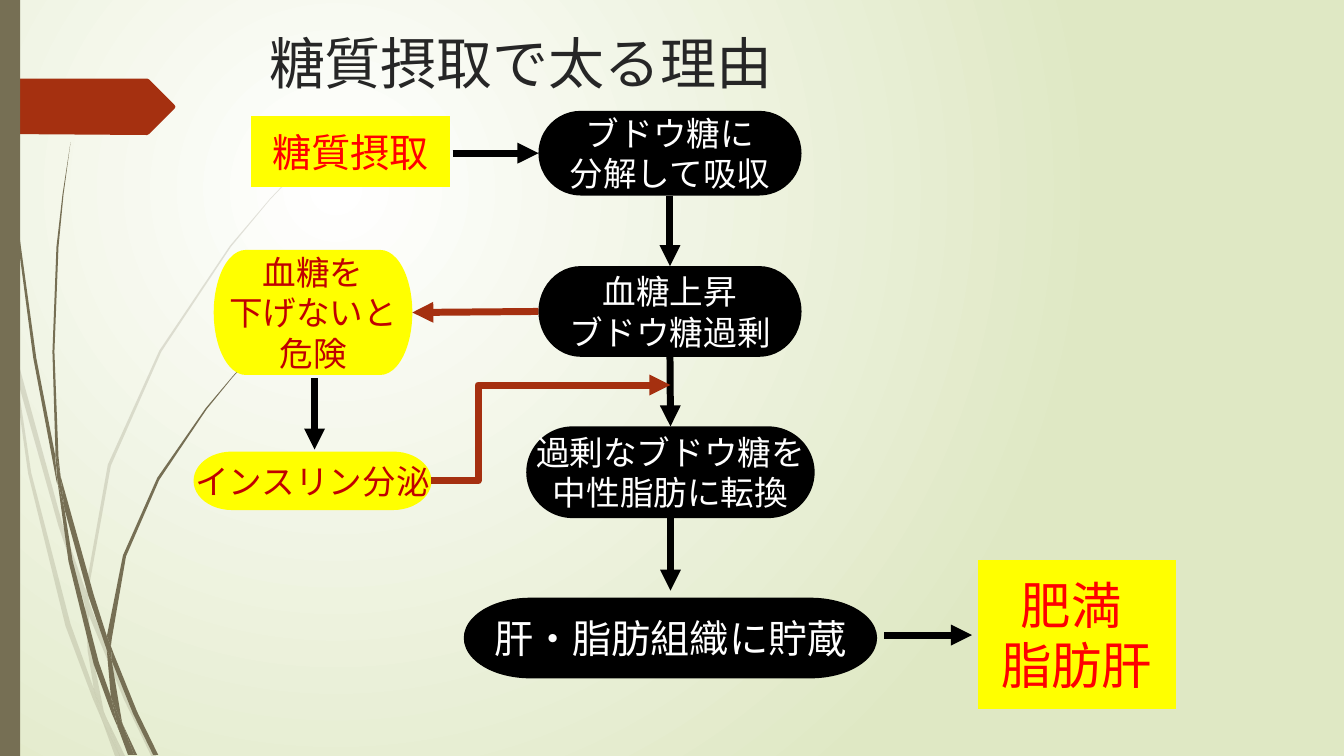
from lxml.etree import SubElement
from pptx import Presentation
from pptx.dml.color import RGBColor
from pptx.enum.shapes import MSO_CONNECTOR as LINK, MSO_SHAPE as SHAPE
from pptx.enum.text import MSO_ANCHOR, PP_ALIGN
from pptx.oxml import parse_xml
from pptx.oxml.ns import nsdecls, qn
from pptx.util import Inches, Pt

BLACK = RGBColor(0x00, 0x00, 0x00)
WHITE = RGBColor(0xFF, 0xFF, 0xFF)
YELLOW = RGBColor(0xFF, 0xFF, 0x00)
RED = RGBColor(0xFF, 0x00, 0x00)
DARK_RED = RGBColor(0xC0, 0x00, 0x00)
RUST = RGBColor(0xA5, 0x30, 0x10)
OLIVE = RGBColor(0x76, 0x6F, 0x54)
CHARCOAL = RGBColor(0x26, 0x26, 0x26)

# Outlines of the grass blades, in inches
PALE_BLADES = [
    [(.11, 3.5), (.09, 3.22), (0, 2.82), (0, 2.99), (.1, 3.44)],
    [(.58, 5.22), (.84, 5.99), (.85, 5.86), (.62, 5.2), (.14, 3.45), (.17, 3.76)],
    [(.92, 6.07), (.88, 5.96), (.88, 6.1), (1.23, 6.94), (1.5, 7.5), (1.55, 7.5), (1.27, 6.92)],
    [(1.19, 7.5), (1.24, 7.5), (1.05, 7.11)],
    [(.93, 6.83), (.7, 6.19), (.31, 4.69), (.17, 3.76), (.11, 3.5), (.28, 4.7), (.65, 6.21),
     (.92, 6.93), (1.01, 7.14), (.99, 7.07)],
    [(.84, 5.99), (.87, 6.46), (.93, 6.83), (.96, 6.92), (1.05, 7.11), (1.03, 7.06),
     (.91, 6.46), (.88, 6.1), (.88, 6.08)],
    [(.88, 5.84), (1.1, 4.62), (1.6, 3.49), (2.29, 2.45), (2.68, 1.98), (2.9, 1.75), (3.12, 1.54),
     (3.12, 1.53), (2.89, 1.75), (2.68, 1.97), (2.28, 2.44), (1.58, 3.48), (1.07, 4.61),
     (.85, 5.84), (.85, 5.86), (.88, 5.96)],
    [(1.01, 7.14), (1.14, 7.5), (1.19, 7.5)],
    [(.88, 6.08), (.88, 6.1), (.88, 5.96), (.85, 5.86), (.84, 5.99)],
    [(.96, 6.92), (.93, 6.83), (.99, 7.07), (1.01, 7.14), (1.19, 7.5), (1.05, 7.11)],
]
DARK_BLADES = [
    [(.07, 1.1), (.17, 2.33), (.33, 3.55), (.56, 4.77), (.57, 4.81), (.55, 4.57), (.55, 4.53),
     (.36, 3.55), (.19, 2.32), (.08, 1.09), (.05, .48), (.04, 0), (.03, 0), (.04, .48)],
    [(.88, 5.92), (1.06, 6.45), (1.06, 6.31), (.93, 5.9), (.6, 4.72), (.64, 5.05)],
    [(1.13, 6.49), (1.1, 6.41), (1.11, 6.56), (1.32, 7.08), (1.52, 7.49), (1.57, 7.49),
     (1.36, 7.06)],
    [(1.1, 6.91), (.98, 6.57), (.72, 5.56), (.64, 5.05), (.57, 4.77), (.68, 5.57), (.93, 6.59),
     (1.11, 7.08), (1.17, 7.22), (1.16, 7.17)],
    [(.6, 4.72), (.58, 4.53), (.54, 3.49), (.58, 2.45), (.63, 1.93), (.7, 1.41), (.62, 1.93),
     (.56, 2.45), (.52, 3.49), (.55, 4.49)],
    [(1.33, 7.49), (1.36, 7.49), (1.22, 7.19)],
    [(.57, 4.77), (.64, 5.05), (.6, 4.72), (.55, 4.49), (.55, 4.53)],
    [(1.11, 6.33), (1.25, 5.52), (1.58, 4.76), (2.05, 4.06), (2.31, 3.74), (2.45, 3.59),
     (2.61, 3.44), (2.45, 3.58), (2.31, 3.73), (2.04, 4.05), (1.56, 4.74), (1.22, 5.51),
     (1.06, 6.31), (1.1, 6.41)],
    [(1.17, 7.22), (1.27, 7.49), (1.31, 7.49)],
    [(1.06, 6.45), (1.1, 6.91), (1.16, 7.06), (1.22, 7.19), (1.21, 7.16), (1.11, 6.56),
     (1.09, 6.51)],
    [(1.06, 6.45), (1.09, 6.51), (1.11, 6.56), (1.1, 6.41), (1.06, 6.31)],
    [(1.16, 7.06), (1.1, 6.91), (1.16, 7.17), (1.17, 7.22), (1.3, 7.49), (1.33, 7.49),
     (1.22, 7.19)],
]
RIBBON = [(0, .78), (1.46, .78), (1.48, .79), (1.73, 1.04), (1.74, 1.06), (1.73, 1.08),
          (1.48, 1.33), (1.46, 1.34), (0, 1.33)]

prs = Presentation()
prs.slide_width, prs.slide_height = Inches(13.33), Inches(7.5)
slide = prs.slides.add_slide(prs.slide_layouts[6])
shapes = slide.shapes

slide.element.cSld.insert(0, parse_xml(
    f'<p:bg {nsdecls("p", "a")}><p:bgPr><a:gradFill rotWithShape="1"><a:gsLst>'
    '<a:gs pos="0"><a:srgbClr val="FFFFFF"/></a:gs>'
    '<a:gs pos="100000"><a:srgbClr val="DFE8C4"/></a:gs></a:gsLst>'
    '<a:path path="circle"><a:fillToRect l="50000" t="50000" r="100000" b="100000"/></a:path>'
    '</a:gradFill><a:effectLst/></p:bgPr></p:bg>'))


def paint(shape, color):
    shape.shadow.inherit = False
    shape.fill.solid()
    shape.fill.fore_color.rgb = color
    shape.line.fill.background()


def write(frame, text, **font_format):
    """Put text with line breaks in the frame's first paragraph and format its runs."""
    frame.vertical_anchor = MSO_ANCHOR.MIDDLE
    paragraph = frame.paragraphs[0]
    paragraph.text = text
    for run in paragraph.runs:
        run.font.color.rgb = font_format["color"]
        for attribute in ("name", "size"):
            setattr(run.font, attribute, font_format[attribute])
    return paragraph


# Theme decoration on the left edge
outlines = [(blade, OLIVE, 20) for blade in PALE_BLADES]
outlines += [(blade, OLIVE, 100) for blade in DARK_BLADES]
outlines.append((RIBBON, RUST, 100))
for outline, color, opacity in outlines:
    points = [(Inches(x), Inches(y)) for x, y in outline]
    builder = shapes.build_freeform(*points[0])
    builder.add_line_segments(points[1:], close=True)
    decoration = builder.convert_to_shape()
    paint(decoration, color)
    if opacity < 100:
        fill_color = decoration.element.spPr.find(qn("a:solidFill"))[0]
        SubElement(fill_color, qn("a:alpha"), val=str(opacity * 1000))
edge_bar = shapes.add_shape(SHAPE.RECTANGLE, 0, 0, Inches(0.2), prs.slide_height)
paint(edge_bar, OLIVE)

title = shapes.add_textbox(Inches(2.57), Inches(0.23), Inches(8.5), Inches(0.77))
title.text_frame.word_wrap = True
write(title.text_frame, "糖質摂取で太る理由", name="TeX Gyre Adventor", size=Pt(40), color=CHARCOAL)

# Steps: text, left, top, width, height, outline, fill, text colour, size
PILL, BOX = SHAPE.FLOWCHART_TERMINATOR, SHAPE.FLOWCHART_PROCESS
STEPS = {
    "intake": ("糖質摂取", 2.49, 1.15, 1.97, 0.71, BOX, YELLOW, RED, 28),
    "absorb": ("ブドウ糖に\n分解して吸収", 5.34, 1.1, 2.61, 0.84, PILL, BLACK, WHITE, 24),
    "rise": ("血糖上昇\nブドウ糖過剰", 5.34, 2.64, 2.61, 0.9, PILL, BLACK, WHITE, 24),
    "convert": ("過剰なブドウ糖を\n中性脂肪に転換", 5.22, 4.23, 2.86, 0.91, PILL, BLACK, WHITE, 24),
    "store": ("肝・脂肪組織に貯蔵", 4.6, 5.93, 4.1, 0.8, PILL, BLACK, WHITE, 28),
    "obesity": ("肥満 \n脂肪肝", 9.7, 5.56, 1.96, 1.47, BOX, YELLOW, RED, 36),
    "danger": ("血糖を\n下げないと\n危険", 2.12, 2.48, 1.97, 1.24, PILL, YELLOW, DARK_RED, 24),
    "insulin": ("インスリン分泌", 1.92, 4.48, 2.36, 0.58, PILL, YELLOW, DARK_RED, 24),
}
steps = {}
for key, (text, left, top, width, height, outline, fill, color, size) in STEPS.items():
    step = shapes.add_shape(outline, Inches(left), Inches(top), Inches(width), Inches(height))
    paint(step, fill)
    step.text_frame.word_wrap = False
    paragraph = write(step.text_frame, text, name="Times New Roman", size=Pt(size), color=color)
    paragraph.alignment = PP_ALIGN.CENTER
    steps[key] = step

# Arrows: kind, start, end, colour, joined step and side at the start, then at the end
TOP, LEFT, BOTTOM, RIGHT = range(4)
ARROWS = [
    (LINK.STRAIGHT, (4.49, 1.52), (5.34, 1.52), BLACK, None, ("absorb", LEFT)),
    (LINK.STRAIGHT, (6.65, 1.94), (6.65, 2.64), BLACK, ("absorb", BOTTOM), ("rise", TOP)),
    (LINK.STRAIGHT, (6.65, 3.54), (6.65, 4.23), BLACK, ("rise", BOTTOM), ("convert", TOP)),
    (LINK.STRAIGHT, (6.65, 5.14), (6.65, 5.86), BLACK, ("convert", BOTTOM), None),
    (LINK.STRAIGHT, (8.77, 6.3), (9.64, 6.3), BLACK, None, None),
    (LINK.STRAIGHT, (5.34, 3.1), (4.09, 3.1), RUST, ("rise", LEFT), ("danger", RIGHT)),
    (LINK.STRAIGHT, (3.12, 3.75), (3.12, 4.46), BLACK, None, None),
    (LINK.ELBOW, (4.28, 4.77), (6.65, 3.82), RUST, None, None),
]
for kind, start, end, color, source, target in ARROWS:
    arrow = shapes.add_connector(kind, *(Inches(value) for value in start + end))
    arrow.line.color.rgb = color
    arrow.line.width = Pt(5)
    SubElement(arrow.line._get_or_add_ln(), qn("a:tailEnd"), type="triangle")
    SubElement(arrow._element.spPr, qn("a:effectLst"))
    if source:
        arrow.begin_connect(steps[source[0]], source[1])
    if target:
        arrow.end_connect(steps[target[0]], target[1])
    if kind == LINK.ELBOW:
        bend = arrow._element.spPr.prstGeom.get_or_add_avLst()
        SubElement(bend, qn("a:gd"), name="adj1", fmla="val 19500")

prs.save("out.pptx")
